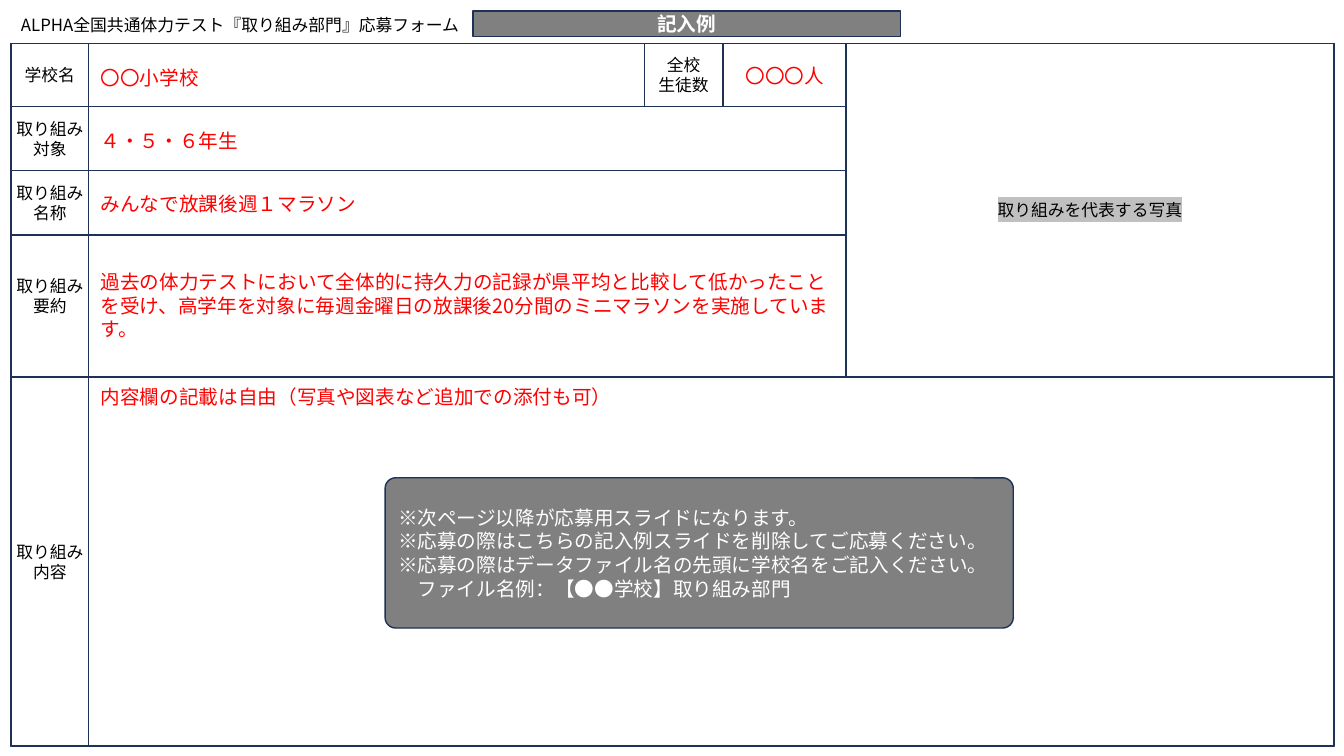
import pptx
import pptx.util
import pptx.dml.color
import pptx.enum.shapes
import pptx.enum.text
import pptx.oxml
import pptx.oxml.ns

RGBColor = pptx.dml.color.RGBColor
NAVY = RGBColor(0x1E, 0x32, 0x56)
GRAY = RGBColor(0x80, 0x80, 0x80)
SILVER = RGBColor(0xC0, 0xC0, 0xC0)
BLACK = RGBColor(0x00, 0x00, 0x00)
RED = RGBColor(0xFF, 0x00, 0x00)
WHITE = RGBColor(0xFF, 0xFF, 0xFF)

ALIGN = pptx.enum.text.PP_ALIGN
ANCHOR = pptx.enum.text.MSO_ANCHOR
SHAPE = pptx.enum.shapes.MSO_SHAPE

COLUMNS = [11, 88, 639, 717, 839, 1323]
ROWS = [43, 106, 169, 233, 374, 740]

LABELS = [
    (0, 0, ["学校名"], 4),
    (2, 0, ["全校", "生徒数"], 4),
    (0, 1, ["取り組み", "対象"], 4),
    (0, 2, ["取り組み", "名称"], 4),
    (0, 3, ["取り組み", "要約"], 24),
    (0, 4, ["取り組み", "内容"], 4),
]

BLANK_CELLS = [(1, 0, 2, 1), (3, 0, 4, 1), (1, 1, 4, 2),
               (1, 2, 4, 3), (1, 3, 4, 4), (0, 4, 5, 5)]

ANSWERS = [
    (90, 45, 546, 64, "〇〇小学校", ALIGN.LEFT, ANCHOR.MIDDLE),
    (717, 43, 123, 64, "〇〇〇人", ALIGN.CENTER, ANCHOR.MIDDLE),
    (90, 108, 749, 64, "４・５・６年生", ALIGN.LEFT, ANCHOR.MIDDLE),
    (90, 170, 749, 64, "みんなで放課後週１マラソン", ALIGN.LEFT, ANCHOR.MIDDLE),
    (90, 232, 749, 142,
     "過去の体力テストにおいて全体的に持久力の記録が県平均と比較して低かったこと"
     "を受け、高学年を対象に毎週金曜日の放課後20分間のミニマラソンを実施しています。",
     ALIGN.LEFT, ANCHOR.MIDDLE),
    (90, 377, 1232, 361, "内容欄の記載は自由（写真や図表など追加での添付も可）",
     ALIGN.LEFT, ANCHOR.TOP),
]

NOTICE = [
    "※次ページ以降が応募用スライドになります。",
    "※応募の際はこちらの記入例スライドを削除してご応募ください。",
    "※応募の際はデータファイル名の先頭に学校名をご記入ください。",
    "　ファイル名例：【●●学校】取り組み部門",
]


def px(length):
    return pptx.util.Emu(length * 9144)


def assign(target, values):
    for name, value in values.items():
        setattr(target, name, value)


class FormSlide:
    font_name = "Noto Sans CJK JP"
    line_ratio = 1.2

    def __init__(self, presentation):
        self.slide = presentation.slides.add_slide(presentation.slide_layouts[6])

    def box(self, left, top, width, height, fill=None, kind=SHAPE.RECTANGLE):
        shape = self.slide.shapes.add_shape(kind, px(left), px(top), px(width), px(height))
        shape.shadow.inherit = False
        if fill is None:
            shape.fill.background()
        else:
            shape.fill.solid()
            shape.fill.fore_color.rgb = fill
        shape.line.color.rgb = NAVY
        shape.line.width = pptx.util.Pt(1)
        return shape

    def cell(self, column, row, last_column, last_row):
        left, top = COLUMNS[column], ROWS[row]
        return self.box(left, top, COLUMNS[last_column] - left, ROWS[last_row] - top)

    def text_box(self, left, top, width, height, lines, **style):
        shape = self.slide.shapes.add_textbox(px(left), px(top), px(width), px(height))
        self.fill_text(shape, lines, **style)

    def fill_text(self, shape, lines, size=14, color=BLACK, align=ALIGN.LEFT,
                  anchor=ANCHOR.MIDDLE, insets=(10, 5, 10, 5), bold=False, highlight=None):
        left, top, right, bottom = map(px, insets)
        frame = shape.text_frame
        assign(frame, {
            "word_wrap": True, "vertical_anchor": anchor,
            "margin_left": left, "margin_top": top,
            "margin_right": right, "margin_bottom": bottom,
        })
        for index, line in enumerate(lines):
            paragraph = frame.add_paragraph() if index else frame.paragraphs[0]
            assign(paragraph, {"alignment": align,
                               "line_spacing": pptx.util.Pt(size * self.line_ratio)})
            run = paragraph.add_run()
            run.text = line
            assign(run.font, {"size": pptx.util.Pt(size), "bold": bold,
                              "name": self.font_name})
            run.font.color.rgb = color
            self.finish_run(run, highlight)

    def finish_run(self, run, highlight):
        properties = run._r.get_or_add_rPr()
        namespace = pptx.oxml.ns.nsdecls("a")
        latin = properties.find(pptx.oxml.ns.qn("a:latin"))
        latin.addnext(pptx.oxml.parse_xml(
            f'<a:ea {namespace} typeface="{self.font_name}"/>'))
        if highlight is not None:
            latin.addprevious(pptx.oxml.parse_xml(
                f'<a:highlight {namespace}><a:srgbClr val="{highlight}"/></a:highlight>'))


def main():
    presentation = pptx.Presentation()
    assign(presentation, {"slide_width": px(1333), "slide_height": px(750)})
    form = FormSlide(presentation)

    form.cell(0, 0, 5, 5)
    for bounds in BLANK_CELLS:
        form.cell(*bounds)
    for column, row, lines, bottom in LABELS:
        label = form.cell(column, row, column + 1, row + 1)
        form.fill_text(label, lines, size=12, align=ALIGN.CENTER, insets=(4, 4, 4, bottom))
    photo = form.cell(4, 0, 5, 4)
    form.fill_text(photo, ["取り組みを代表する写真"], size=12, align=ALIGN.CENTER,
                   insets=(4, 4, 4, 4), highlight=SILVER)

    form.text_box(11, 7, 551, 36, ["ALPHA全国共通体力テスト『取り組み部門』応募フォーム"], size=12)
    for left, top, width, height, answer, align, anchor in ANSWERS:
        form.text_box(left, top, width, height, [answer],
                      color=RED, align=align, anchor=anchor)

    badge = form.box(469, 11, 424, 25, GRAY)
    form.fill_text(badge, ["記入例"], color=WHITE, align=ALIGN.CENTER,
                   insets=(0, 0, 0, 0), bold=True)
    notice = form.box(382, 474, 623, 149, GRAY, SHAPE.ROUNDED_RECTANGLE)
    notice.adjustments[0] = 0.07
    form.fill_text(notice, NOTICE, color=WHITE)

    presentation.save("out.pptx")


if __name__ == "__main__":
    main()
